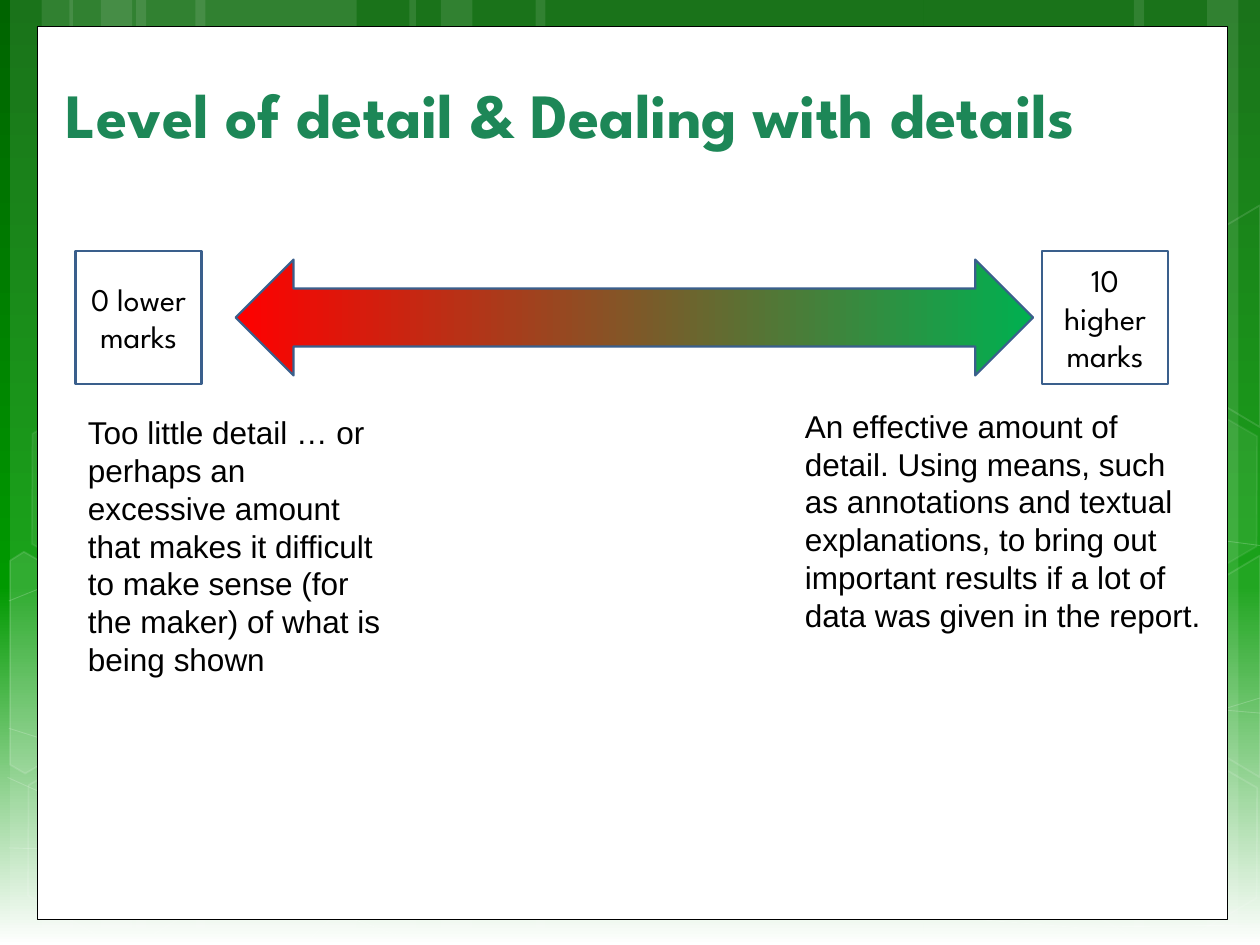
from collections import namedtuple
from lxml import etree
from pptx import Presentation
from pptx.dml.color import RGBColor
from pptx.enum.shapes import MSO_SHAPE
from pptx.enum.text import MSO_ANCHOR, MSO_AUTO_SIZE, PP_ALIGN
from pptx.oxml.ns import qn
from pptx.util import Inches, Pt

RECT, HEX, ARROW = MSO_SHAPE.RECTANGLE, MSO_SHAPE.HEXAGON, MSO_SHAPE.LEFT_RIGHT_ARROW
TOP, MID, BASE = MSO_ANCHOR.TOP, MSO_ANCHOR.MIDDLE, MSO_ANCHOR.BOTTOM
LEFT, MIDST = PP_ALIGN.LEFT, PP_ALIGN.CENTER
NO_FIT, GROW = MSO_AUTO_SIZE.NONE, MSO_AUTO_SIZE.SHAPE_TO_FIT_TEXT

# The slide is a grid of 100 columns by 75 rows of square cells.
COLS, ROWS, CELL = 100, 75, 0.1
Box = namedtuple("Box", "x y w h")
Theme = namedtuple("Theme", "white black title edge sky scale head body big text thin rim")
LOOK = Theme(
    white="FFFFFF", black="000000", title="1D8757", edge="3A5F8C",
    sky=((0, "006400"), (62, "009900"), (100, "FFFFFF")),
    scale=((0, "FF0000"), (100, "00B050")),
    head="League Spartan", body="Arial", big=36, text=18, thin=0.5, rim=1.25)


def cells(n):
    return Inches(n * CELL)


def place(box):
    return [cells(n) for n in box]


def tint(paint, color, alpha=100):
    """Give a fill one colour, at alpha percent; no colour leaves it empty."""
    if color is None:
        paint.background()
        return
    paint.solid()
    paint.fore_color.rgb = RGBColor.from_string(color)
    if alpha < 100:
        node = paint._xPr.find(qn("a:solidFill"))[0]
        etree.SubElement(node, qn("a:alpha"), val=str(alpha * 1000))


def blend(paint, stops, turn):
    paint.gradient()
    paint.gradient_angle = turn
    ramp = paint._xPr.find(qn("a:gradFill")).find(qn("a:gsLst"))
    for old in list(ramp):
        ramp.remove(old)
    for share, color in stops:
        stop = etree.SubElement(ramp, qn("a:gs"), pos=str(share * 1000))
        etree.SubElement(stop, qn("a:srgbClr"), val=color)


def style(shape, fill, alpha, line, width=1, fade=100):
    shape.shadow.inherit = False
    tint(shape.fill, fill, alpha)
    tint(shape.line.fill, line, fade)
    if line:
        shape.line.width = Pt(width)


def trace(slide, points, close):
    """Draw an outline through points given in cells."""
    spots = [(cells(x), cells(y)) for x, y in points]
    pen = slide.shapes.build_freeform(*spots[0])
    pen.add_line_segments(spots[1:], close=close)
    return pen.convert_to_shape()


def write(shape, words, font, size, color, align, anchor, fit, bold=False):
    frame = shape.text_frame
    frame.word_wrap = True
    frame.auto_size = fit
    frame.vertical_anchor = anchor
    para = frame.paragraphs[0]
    para.alignment = align
    run = para.add_run()
    run.text = words
    run.font.name = font
    run.font.size = Pt(size)
    run.font.bold = bold
    run.font.color.rgb = RGBColor.from_string(color)


def stripes(slide, box):
    spans = [(10.8, 17.5), (0.8, 5), (3.3, 8.3), (15.5, 17.5), (5.5, 5), (8, 8.3),
             (73.3, 17.5), (95.8, 4.2), (90, 8.3), (42.5, 30.8), (32.5, 5), (35, 8.3)]
    for x, w in spans:
        band = slide.shapes.add_shape(RECT, *place(Box(box.x + x, box.y, w, box.h)))
        style(band, LOOK.white, 10, None)


def curves(slide):
    waves = [
        [(0.7, 67.3), (19, 67.8), (45.8, 66.5), (79.2, 61.7), (100, 55.4)],
        [(0.7, 47.7), (12.1, 43.1), (34.7, 38.7), (65.4, 38.7), (100, 43.3)],
        [(0.6, 61.7), (16, 68.6), (33.4, 74.9)],
        [(0.7, 57.8), (12.8, 61.6), (35.7, 67.3), (62.8, 71.8), (85.3, 73.6),
         (100, 73.4)],
        [(24.2, 74.9), (30.2, 69.1), (38.8, 63.9), (47, 60.9), (60.8, 57.8),
         (68, 56.9), (79.4, 56.2), (95.3, 56.2), (100, 56.6)],
    ]
    for wave in waves:
        style(trace(slide, wave, False), None, 100, LOOK.white, LOOK.thin, 20)


def combs(slide):
    """Faint hexagons that show in the side margins."""
    for x, y, alpha, fade in [(1.1, 59.1, 0, 12), (1.4, 31.2, 7, 8),
                              (83.4, 59.3, 0, 12), (83.4, 31.4, 7, 8)]:
        comb = slide.shapes.add_shape(HEX, *place(Box(x, y, 17.5, 15.2)))
        comb.adjustments[0] = 0.285
        comb.rotation = 30
        style(comb, LOOK.white if alpha else None, alpha, LOOK.white, 1, fade)
    left = [(0.8, 44.5), (1.9, 43.8), (9.6, 48.2), (9.5, 57), (2, 61.4), (0.8, 60.7)]
    right = [(92.6, 48.5), (100, 44.1), (100, 61.7), (92.6, 57.3)]
    upper = [(x, y - 27.8) for x, y in right]
    for points, alpha in [(left, 10), (right, 4), (upper, 0)]:
        style(trace(slide, points, True), LOOK.white if alpha else None, alpha,
              LOOK.white, 1, 12)


def panel(slide, box):
    sheet = slide.shapes.add_shape(RECT, *place(box))
    style(sheet, LOOK.white, 100, LOOK.black, LOOK.thin)


def heading(slide, box, words):
    title = slide.shapes.title
    title.left, title.top, title.width, title.height = place(box)
    slide.shapes._spTree.append(title._element)
    write(title, words, LOOK.head, LOOK.big, LOOK.title, LEFT, BASE, NO_FIT, True)


def note(slide, box, words):
    text = slide.shapes.add_textbox(*place(box))
    write(text, words, LOOK.body, LOOK.text, LOOK.black, LEFT, TOP, GROW)


def scale(slide, box, low, high):
    """A mark at each end of the box, and a graded arrow between them."""
    side = 10
    for x, words in [(box.x, low), (box.x + box.w - side, high)]:
        mark = slide.shapes.add_shape(RECT, *place(Box(x, box.y, side, box.h)))
        style(mark, None, 100, LOOK.edge, LOOK.rim)
        write(mark, words, LOOK.head, LOOK.text, LOOK.black, MIDST, MID, NO_FIT)
    inner = Box(box.x + side + 2.7, box.y + 0.7, box.w - 2 * side - 3.4, box.h - 1.4)
    arrow = slide.shapes.add_shape(ARROW, *place(inner))
    style(arrow, None, 100, LOOK.edge, LOOK.rim)
    blend(arrow.fill, LOOK.scale, 0)


def main():
    deck = Presentation()
    deck.slide_width, deck.slide_height = cells(COLS), cells(ROWS)
    slide = deck.slides.add_slide(deck.slide_layouts[5])
    blend(slide.background.fill, LOOK.sky, 270)
    stripes(slide, Box(0, 0, COLS, ROWS))
    curves(slide)
    combs(slide)
    panel(slide, Box(3, 2.1, 94.4, 70.9))
    heading(slide, Box(4.2, 4.9, 92.4, 7.6), "Level of detail & Dealing with details")
    note(slide, Box(6, 32.3, 25.7, 22.2),
         "Too little detail … or perhaps an excessive amount that makes it difficult "
         "to make sense (for the maker) of what is being shown")
    note(slide, Box(62.9, 31.8, 33.7, 19.2),
         "An effective amount of detail. Using means, such as annotations and textual "
         "explanations, to bring out important results if a lot of data was given in "
         "the report.")
    scale(slide, Box(6, 19.9, 86.7, 10.6), "0 lower marks", "10 higher marks")
    deck.save("out.pptx")


if __name__ == "__main__":
    main()
